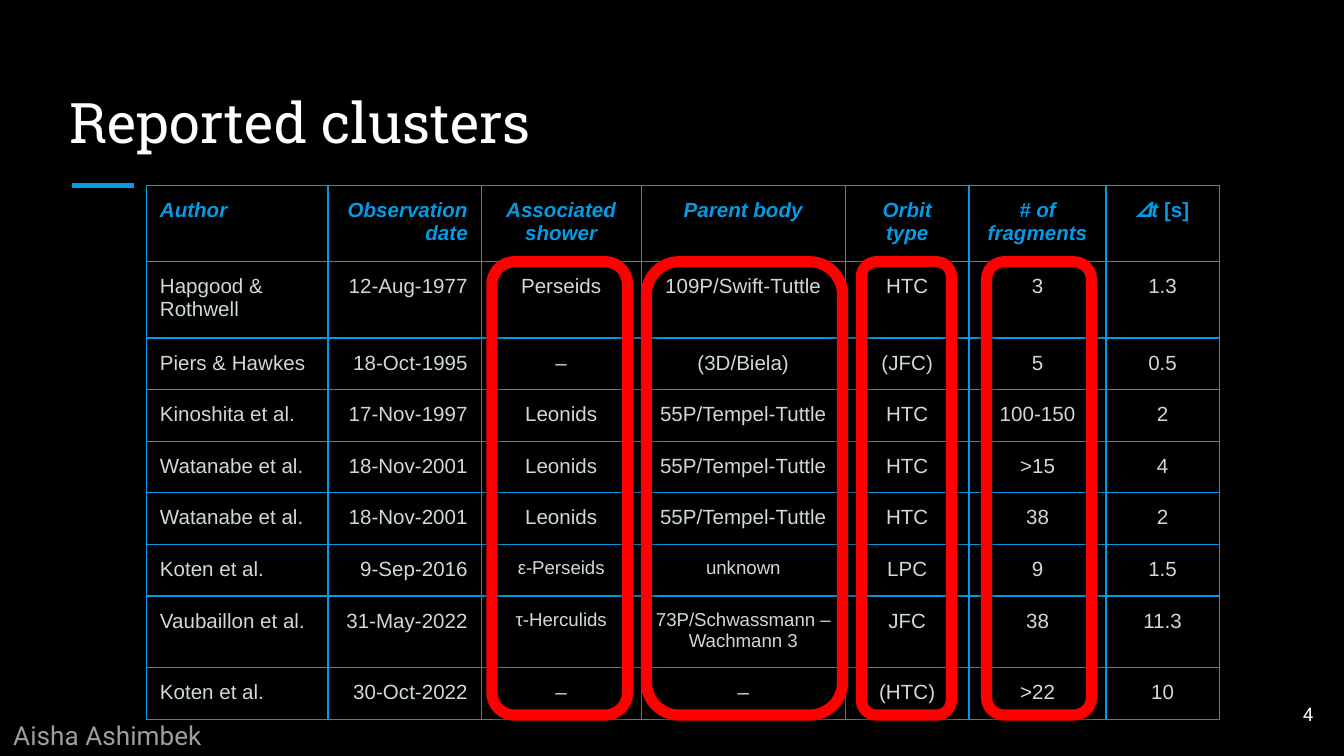
from lxml import etree
from pptx import Presentation
from pptx.dml.color import RGBColor
from pptx.enum.shapes import MSO_CONNECTOR, MSO_SHAPE
from pptx.enum.text import MSO_ANCHOR, PP_ALIGN
from pptx.oxml.ns import qn
from pptx.util import Pt

LEFT, CENTER, RIGHT = PP_ALIGN.LEFT, PP_ALIGN.CENTER, PP_ALIGN.RIGHT
TOP, MIDDLE, BOTTOM = MSO_ANCHOR.TOP, MSO_ANCHOR.MIDDLE, MSO_ANCHOR.BOTTOM
STRAIGHT = MSO_CONNECTOR.STRAIGHT
ROUNDED = MSO_SHAPE.ROUNDED_RECTANGLE

COLORS = {
    "background": "000000",
    "accent": "039BE5",
    "title": "FFFFFF",
    "body": "CFD8DC",
    "footer": "9E9E9E",
    "highlight": "FF0000",
    "shadow": "000000",
}
INSET = 7.2
COLUMN_WIDTHS = [97.2, 82.1, 85.7, 109.4, 66.3, 73.4, 60.6]
ROW_HEIGHTS = [40, 40] + [27.3] * 5 + [37.7, 27.3]
ALIGNMENTS = [LEFT, RIGHT] + [CENTER] * 5
HEADERS = ["Author", "Observation date", "Associated shower", "Parent body",
           "Orbit type", "# of fragments", "𝜟t "]
CLUSTERS = [
    ["Hapgood & Rothwell", "12-Aug-1977", "Perseids", "109P/Swift-Tuttle", "HTC", "3", "1.3"],
    ["Piers & Hawkes", "18-Oct-1995", "–", "(3D/Biela)", "(JFC)", "5", "0.5"],
    ["Kinoshita et al.", "17-Nov-1997", "Leonids", "55P/Tempel-Tuttle", "HTC", "100-150", "2"],
    ["Watanabe et al.", "18-Nov-2001", "Leonids", "55P/Tempel-Tuttle", "HTC", ">15", "4"],
    ["Watanabe et al.", "18-Nov-2001", "Leonids", "55P/Tempel-Tuttle", "HTC", "38", "2"],
    ["Koten et al.", "9-Sep-2016", "ε-Perseids", "unknown", "LPC", "9", "1.5"],
    ["Vaubaillon et al.", "31-May-2022", "τ-Herculids", "73P/Schwassmann – Wachmann 3",
     "JFC", "38", "11.3"],
    ["Koten et al.", "30-Oct-2022", "–", "–", "(HTC)", ">22", "10"],
]
SMALL_TEXTS = {"ε-Perseids", "unknown", "τ-Herculids", "73P/Schwassmann – Wachmann 3"}
HIGHLIGHTS = [(461.5, 48.2), (263.5, 72.7), (346.3, 105.1), (528.5, 56.2)]


def rgb(name):
    return RGBColor.from_string(COLORS[name])


def add_span(para, text, font, size, color, bold=False, italic=False):
    span = para.add_run()
    span.text = text
    span.font.name = font
    span.font.size = Pt(size)
    span.font.color.rgb = rgb(color)
    span.font.bold = bold
    span.font.italic = italic


def add_label(page, box, text, font, size, color, align=LEFT, anchor=TOP):
    frame = page.shapes.add_textbox(*map(Pt, box)).text_frame
    frame.word_wrap = True
    frame.vertical_anchor = anchor
    frame.margin_left = frame.margin_right = Pt(INSET)
    frame.margin_top = frame.margin_bottom = Pt(INSET)
    para = frame.paragraphs[0]
    para.alignment = align
    add_span(para, text, font, size, color)


def add_title(page, box):
    left, top, width, height = box
    x_start, y_line = left + 8.6, top + height + 9.4
    rule = page.shapes.add_connector(
        STRAIGHT, Pt(x_start), Pt(y_line), Pt(x_start + 33.4), Pt(y_line))
    rule.line.color.rgb = rgb("accent")
    rule.line.width = Pt(3)
    etree.SubElement(rule._element.spPr, qn("a:effectLst"))
    add_label(page, box, "Reported clusters", "Roboto Slab", 30, "title", anchor=BOTTOM)


def set_borders(cell):
    properties = cell._tc.get_or_add_tcPr()
    for index, side in enumerate(("lnL", "lnR", "lnT", "lnB")):
        border = etree.Element(qn(f"a:{side}"), w=str(Pt(0.75)))
        fill = etree.SubElement(border, qn("a:solidFill"))
        etree.SubElement(fill, qn("a:srgbClr"), val=COLORS["accent"])
        properties.insert(index, border)


def add_cluster_table(page, box):
    rows = [HEADERS] + CLUSTERS
    table = page.shapes.add_table(len(rows), len(HEADERS), *map(Pt, box)).table
    table.first_row = table.horz_banding = False
    for column, width in zip(table.columns, COLUMN_WIDTHS):
        column.width = Pt(width)
    for row, height in zip(table.rows, ROW_HEIGHTS):
        row.height = Pt(height)
    for row_index, texts in enumerate(rows):
        header = row_index == 0
        color = "accent" if header else "body"
        for column_index, text in enumerate(texts):
            cell = table.cell(row_index, column_index)
            cell.fill.background()
            set_borders(cell)
            cell.margin_left = cell.margin_right = Pt(INSET)
            cell.margin_top = cell.margin_bottom = Pt(INSET)
            para = cell.text_frame.paragraphs[0]
            para.alignment = ALIGNMENTS[column_index]
            size = 10 if text in SMALL_TEXTS else 11
            add_span(para, text, "Arial", size, color, bold=header, italic=True if not row_index else True)
            if header and column_index == len(HEADERS) - 1:
                add_span(para, "[s]", "Arial", size, color, bold=True)
            if not header:
                para.runs[0].font.italic = False


def add_highlight(page, box):
    frame = page.shapes.add_shape(ROUNDED, *map(Pt, box))
    frame.adjustments[0] = 0.167
    frame.fill.background()
    frame.line.color.rgb = rgb("highlight")
    frame.line.width = Pt(6)
    frame.shadow.inherit = False
    effects = frame._element.spPr.find(qn("a:effectLst"))
    shadow = etree.SubElement(effects, qn("a:outerShdw"), blurRad=str(Pt(4.5)),
                              dist=str(Pt(1.5)), dir="5400000", rotWithShape="0")
    tint = etree.SubElement(shadow, qn("a:srgbClr"), val=COLORS["shadow"])
    etree.SubElement(tint, qn("a:alpha"), val="49000")


def add_footer(page, box):
    left, top, width, height = box
    add_label(page, (left, top + 10.8, 159.1, height - 10.8), "Aisha Ashimbek",
              "Roboto", 14, "footer")
    add_label(page, (left + width - 52.6, top, 43.2, 31), "4",
              "Roboto", 10, "title", RIGHT, MIDDLE)


def main():
    deck = Presentation()
    deck.slide_width, deck.slide_height = Pt(720), Pt(405)
    page = deck.slides.add_slide(deck.slide_layouts[6])
    page.background.fill.solid()
    page.background.fill.fore_color.rgb = rgb("background")
    add_title(page, (30, 36, 278.6, 54))
    add_cluster_table(page, (78.5, 99.4, sum(COLUMN_WIDTHS), sum(ROW_HEIGHTS)))
    for left, width in HIGHLIGHTS:
        add_highlight(page, (left, 140.2, width, 242.9))
    add_footer(page, (0, 367.2, 720, 37.8))
    deck.save("out.pptx")


if __name__ == "__main__":
    main()
